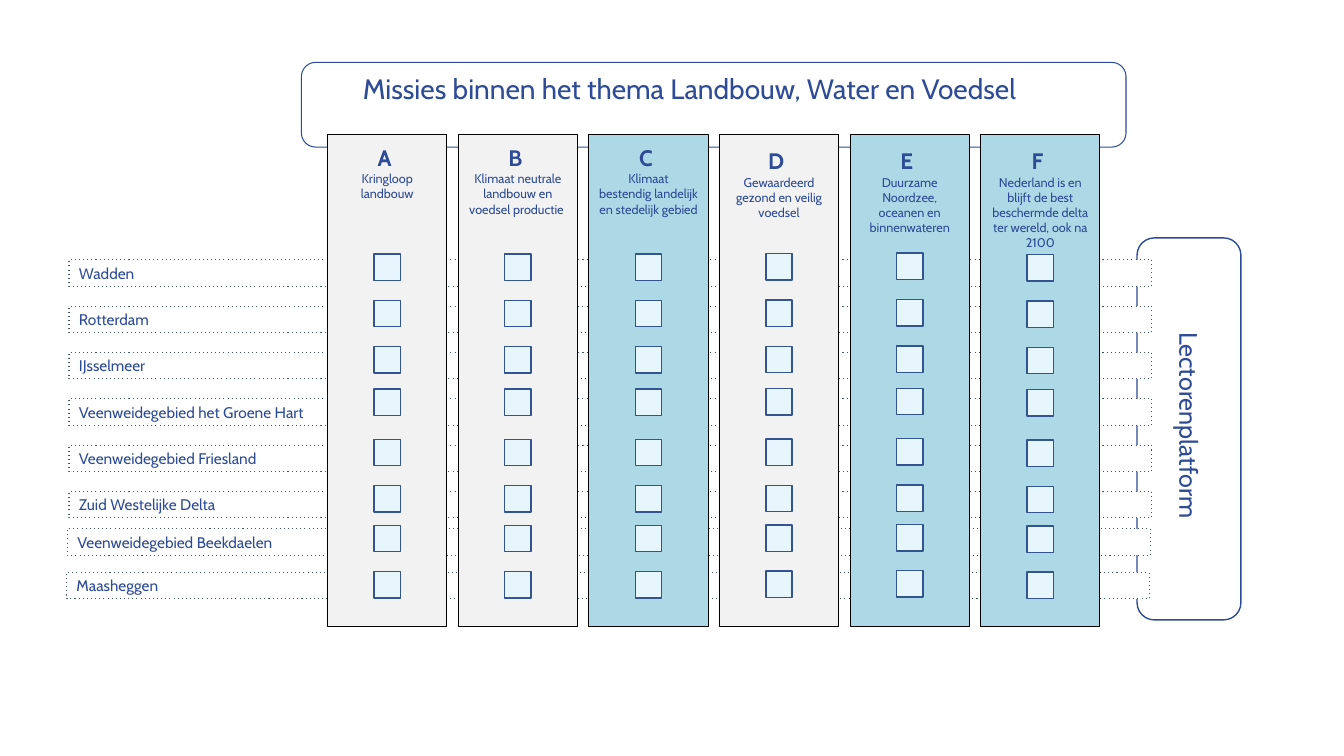
from pptx import Presentation
from pptx.dml.color import RGBColor
from pptx.enum.shapes import MSO_SHAPE
from pptx.enum.dml import MSO_LINE
from pptx.enum.text import MSO_ANCHOR, MSO_AUTO_SIZE, PP_ALIGN
from pptx.oxml.ns import qn
from pptx.util import Pt

RECT, ROUND = MSO_SHAPE.RECTANGLE, MSO_SHAPE.ROUNDED_RECTANGLE
TOP, MIDDLE = MSO_ANCHOR.TOP, MSO_ANCHOR.MIDDLE
LEFT, CENTER = PP_ALIGN.LEFT, PP_ALIGN.CENTER
DOT = MSO_LINE.ROUND_DOT
NAVY, GREY, BLUE = "2D4B96", "F2F2F2", "ADD9E6"

deck = Presentation()
deck.slide_width, deck.slide_height = Pt(960), Pt(540)
slide = deck.slides.add_slide(deck.slide_layouts[5])
shapes = slide.shapes


def add_box(kind, x, y, w, h, fill, line, weight):
    box = shapes.add_shape(kind, Pt(x), Pt(y), Pt(w), Pt(h))
    box.shadow.inherit = False
    if fill:
        box.fill.solid()
        box.fill.fore_color.rgb = RGBColor.from_string(fill)
    else:
        box.fill.background()
    box.line.color.rgb = RGBColor.from_string(line)
    box.line.width = Pt(weight)
    return box


def set_text(shape, paras, align, anchor, inset=7.2):
    """Each paragraph is a list of runs: text, size, bold, font."""
    frame = shape.text_frame
    frame.word_wrap = True
    frame.auto_size = MSO_AUTO_SIZE.NONE
    frame.vertical_anchor = anchor
    frame.margin_left = frame.margin_right = Pt(inset)
    frame.margin_top = frame.margin_bottom = Pt(7.2)
    for i, runs in enumerate(paras):
        para = frame.add_paragraph() if i else frame.paragraphs[0]
        para.alignment = align
        for text, size, bold, font in runs:
            run = para.add_run()
            run.text = text
            run.font.size = Pt(size)
            run.font.bold = bold
            run.font.name = font
            run.font.color.rgb = RGBColor.from_string(NAVY)


# Frames for the platform and the title
add_box(ROUND, 812.2, 169.9, 74.2, 272.9, None, NAVY, 1)
add_box(ROUND, 215.3, 44.6, 589, 60.5, "FFFFFF", NAVY, 0.75)

# Region rows
names = ["Wadden", "Rotterdam", "IJsselmeer", "Veenweidegebied het Groene Hart",
         "Veenweidegebied Friesland", "Zuid Westelijke Delta"]
rows = [(name, 49.3, 185.6 + 33.1 * i) for i, name in enumerate(names)]
rows += [("Veenweidegebied Beekdaelen", 48.2, 377.7), ("Maasheggen", 47.5, 408.9)]
for name, x, y in rows:
    row = add_box(RECT, x, y, 773.5, 18.9, "FFFFFF", "44546A", 0.75)
    row.line.dash_style = DOT
    row.element.find(".//" + qn("a:prstDash")).set("val", "dot")
    set_text(row, [[(name, 11, False, "Cabin")]], LEFT, MIDDLE)

# Platform label
label = shapes.add_textbox(Pt(725.8), Pt(285.1), Pt(246.2), Pt(37.4))
label.rotation = 90
set_text(label, [[("Lectorenplatform", 18, False, "Cabin")]], CENTER, TOP)

# Mission columns: heading runs, lines, fill, shift of the check boxes
missions = [
    ("A ", ["Kringloop", "landbouw"], GREY, 0),
    ("B ", ["Klimaat neutrale landbouw en voedsel productie "], GREY, 0),
    ("C ", ["Klimaat", "bestendig landelijk en stedelijk gebied"], BLUE, 0),
    ("D", ["Gewaardeerd gezond en veilig voedsel"], GREY, -0.3),
    ("E", ["Duurzame Noordzee, oceanen en binnenwateren"], BLUE, -0.6),
    ("F", ["Nederland is en blijft de best beschermde delta ter wereld, ook na 2100"],
     BLUE, 0.4),
]
ticks = [181.4, 214.6, 247.7, 277.9, 313.9, 347, 375.3, 408.3]
for i, (letter, lines, fill, shift) in enumerate(missions):
    x = 234 + 93.3 * i
    col = add_box(RECT, x, 95.8, 85.2, 351.4, fill, "000000", 0.75)
    head = [(letter, 16, True, "Cabin")]
    if len(letter) == 1:
        head.append((" ", 18, False, "Calibri"))
    body = [[(line, 9, False, "Cabin")] for line in lines]
    set_text(col, [head] + body, CENTER, TOP, 7)
    for y in ticks:
        add_box(RECT, x + 33.2, y + shift, 18.8, 18.8, "E7F5FD", "325491", 1)

# Title, in front of its frame
title = shapes.title
title.left, title.top, title.width, title.height = Pt(252), Pt(47.5), Pt(506.2), Pt(31.7)
set_text(title, [[("Missies binnen het thema Landbouw, Water en Voedsel", 20, False, "Cabin")]],
         LEFT, MIDDLE)
shapes.element.append(title.element)

deck.save("out.pptx")
